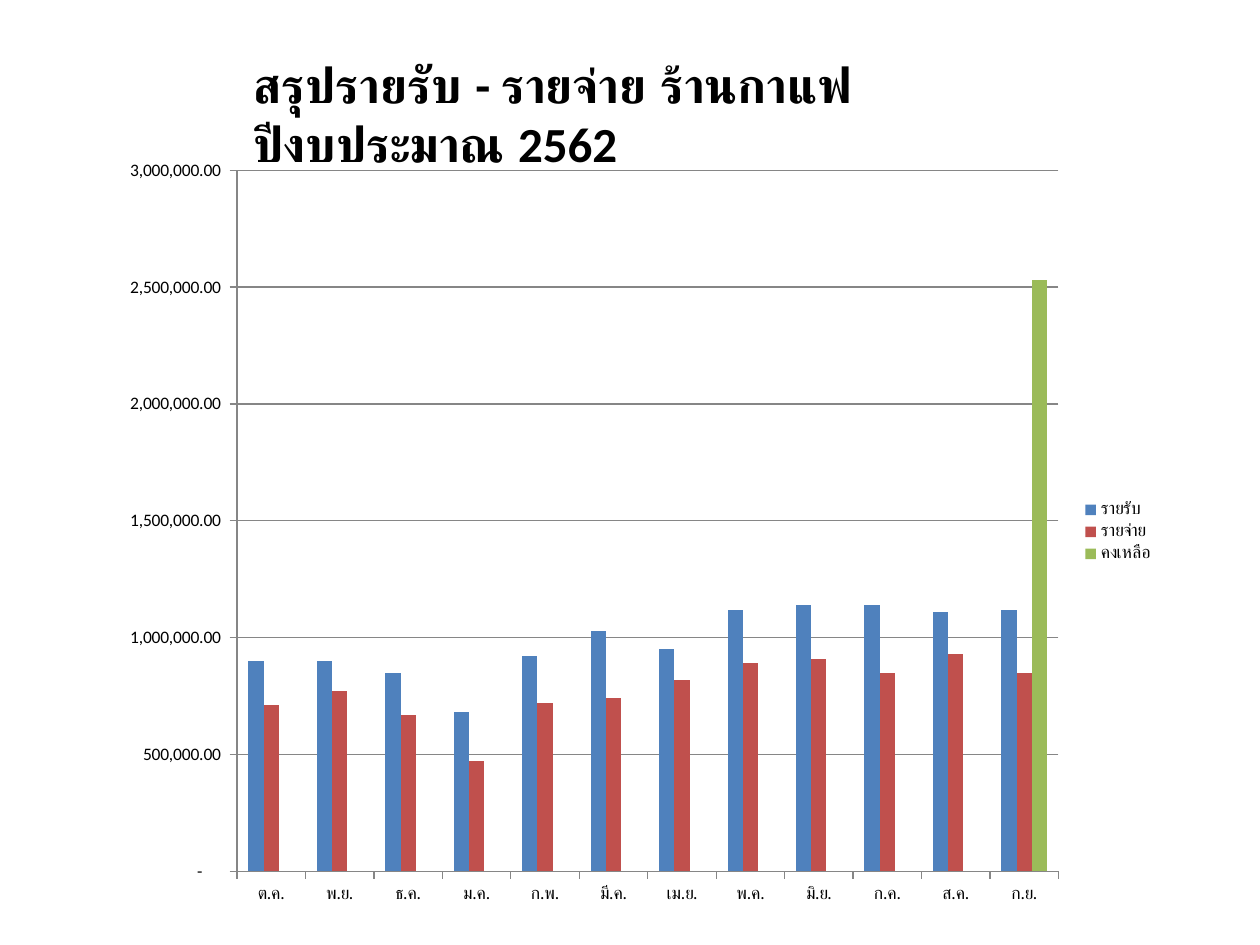
import pptx
import pptx.util
import pptx.chart.data
import pptx.dml.color
import pptx.enum.chart
import pptx.enum.text

RGBColor = pptx.dml.color.RGBColor
BLACK = RGBColor(0x00, 0x00, 0x00)
GRAY = RGBColor(0x86, 0x86, 0x86)
BLUE = RGBColor(0x4F, 0x81, 0xBD)
RED = RGBColor(0xC0, 0x50, 0x4D)
GREEN = RGBColor(0x9B, 0xBB, 0x59)
FONT = "Calibri"


def px(n):
    return round(n * 914400 / 126)


deck = pptx.Presentation()
deck.slide_width = px(1260)
deck.slide_height = px(945)
slide = deck.slides.add_slide(deck.slide_layouts[5])

title = slide.shapes.title
title.left, title.top, title.width, title.height = px(241), px(48), px(785), px(72)
frame = title.text_frame
frame.text = "สรุปรายรับ - รายจ่าย ร้านกาแฟ ปีงบประมาณ 2562"
frame.word_wrap = True
frame.auto_size = pptx.enum.text.MSO_AUTO_SIZE.NONE
frame.vertical_anchor = pptx.enum.text.MSO_ANCHOR.TOP
head = frame.paragraphs[0]
head.alignment = pptx.enum.text.PP_ALIGN.LEFT
font = head.runs[0].font
font.name = FONT
font.size = pptx.util.Pt(28)
font.bold = True
font.color.rgb = BLACK

months = ["ต.ค.", "พ.ย.", "ธ.ค.", "ม.ค.", "ก.พ.", "มี.ค.",
          "เม.ย.", "พ.ค.", "มิ.ย.", "ก.ค.", "ส.ค.", "ก.ย."]
income = [900000, 900000, 850000, 680000, 920000, 1030000,
          950000, 1120000, 1140000, 1140000, 1110000, 1120000]
spent = [710000, 770000, 670000, 470000, 720000, 740000,
         820000, 890000, 910000, 850000, 930000, 850000]
left = [None] * 11 + [2530000]

data = pptx.chart.data.CategoryChartData()
data.categories = months
data.add_series("รายรับ", income)
data.add_series("รายจ่าย", spent)
data.add_series("คงเหลือ", left)

chart = slide.shapes.add_chart(
    pptx.enum.chart.XL_CHART_TYPE.COLUMN_CLUSTERED,
    px(105), px(145), px(1062), px(774), data).chart
chart.has_title = False
chart.font.name = FONT
chart.font.size = pptx.util.Pt(10)
chart.font.color.rgb = BLACK
chart.has_legend = True
chart.legend.position = pptx.enum.chart.XL_LEGEND_POSITION.RIGHT
chart.legend.include_in_layout = False

plot = chart.plots[0]
plot.gap_width = 150
plot.overlap = 0
plot.vary_by_categories = False
for series, color in zip(plot.series, (BLUE, RED, GREEN)):
    series.format.fill.solid()
    series.format.fill.fore_color.rgb = color

for axis in (chart.category_axis, chart.value_axis):
    axis.major_tick_mark = pptx.enum.chart.XL_TICK_MARK.OUTSIDE
    axis.minor_tick_mark = pptx.enum.chart.XL_TICK_MARK.NONE
    axis.format.line.color.rgb = GRAY

scale = chart.value_axis
scale.minimum_scale = 0
scale.maximum_scale = 3000000
scale.major_unit = 500000
scale.has_major_gridlines = True
scale.major_gridlines.format.line.color.rgb = GRAY
scale.tick_labels.number_format = '_(* #,##0.00_);_(* \\(#,##0.00\\);_(* "-"??_);_(@_)'
scale.tick_labels.number_format_is_linked = False

deck.save("out.pptx")
